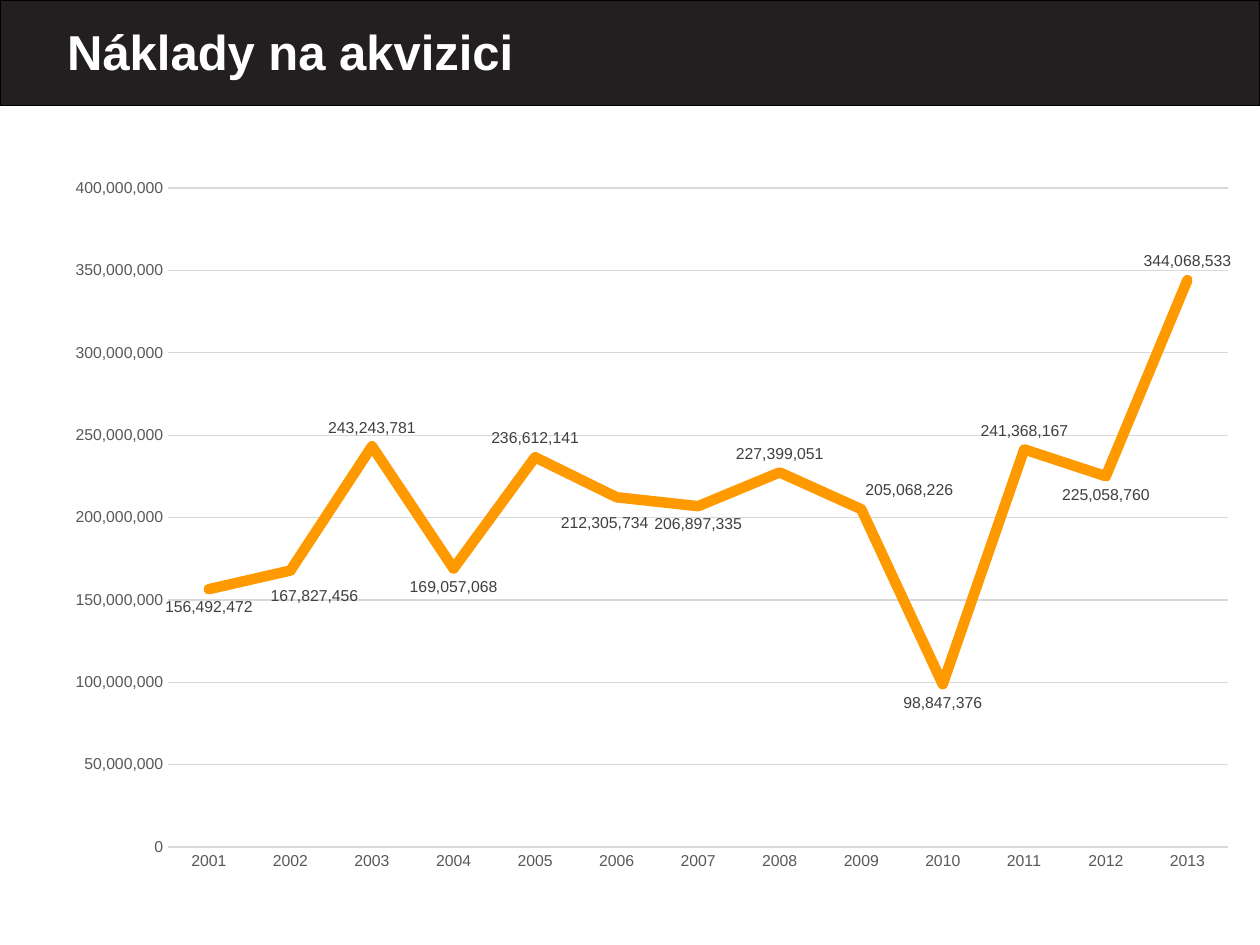
"""Build the acquisition cost slide: a dark title banner above a yearly line chart."""
from lxml import etree
from pptx import Presentation
from pptx.chart.data import CategoryChartData
from pptx.dml.color import RGBColor
from pptx.enum.chart import XL_CHART_TYPE, XL_LABEL_POSITION, XL_MARKER_STYLE, XL_TICK_MARK
from pptx.enum.shapes import MSO_SHAPE
from pptx.enum.text import MSO_ANCHOR, PP_ALIGN
from pptx.oxml.ns import qn
from pptx.util import Cm, Pt

COLORS = {"banner": "231F20", "border": "000000", "title": "FFFFFF", "axis": "595959",
          "grid": "D9D9D9", "label": "404040", "cost": "FF9900"}
COSTS = [156492472, 167827456, 243243781, 169057068, 236612141, 212305734, 206897335,
         227399051, 205068226, 98847376, 241368167, 225058760, 344068533]
FIRST_YEAR = 2001
CHART_BOX = [Cm(1.04), Cm(3.33), Cm(24.21), Cm(14.53)]
PLOT_BOX = [Cm(3.39), Cm(3.79), Cm(21.37), Cm(13.29)]
LABELS_BELOW = [2001, 2002, 2004, 2006, 2007, 2010, 2012]
LABEL_SHIFTS = {2002: (0.02, 0.01), 2006: (-0.01, 0.01), 2009: (0.04, 0)}


def set_font(font, color, size, bold=False):
    for key, value in {"name": "Arial", "size": Pt(size), "bold": bold}.items():
        setattr(font, key, value)
    font.color.rgb = RGBColor.from_string(COLORS[color])


def add_layout(parent, index, values):
    for old in parent.findall(qn("c:layout")):
        parent.remove(old)
    layout = etree.Element(qn("c:layout"))
    manual = etree.SubElement(layout, qn("c:manualLayout"))
    for tag, value in values.items():
        etree.SubElement(manual, qn(f"c:{tag}")).set("val", str(value))
    parent.insert(index, layout)


rgb = {name: RGBColor.from_string(value) for name, value in COLORS.items()}
prs = Presentation()
prs.slide_width, prs.slide_height = Cm(25.4), Cm(19.05)
s = prs.slides.add_slide(prs.slide_layouts[5])

banner = s.shapes.add_shape(MSO_SHAPE.RECTANGLE, 0, 0, prs.slide_width, Cm(2.13))
banner.shadow.inherit = False
banner.fill.solid()
banner.fill.fore_color.rgb = rgb["banner"]
banner.line.color.rgb = rgb["border"]
banner.line.width = Pt(0.75)
s.shapes._spTree.insert(2, banner._element)

title = s.shapes.title
box = {"left": Cm(1.1), "top": Cm(0.13), "width": Cm(22.86), "height": Cm(1.8)}
for key, value in box.items():
    setattr(title, key, value)
tf = title.text_frame
tf.vertical_anchor = MSO_ANCHOR.MIDDLE
p = tf.paragraphs[0]
p.alignment = PP_ALIGN.LEFT
r = p.add_run()
r.text = "Náklady na akvizici"
set_font(r.font, "title", 28, True)

data = CategoryChartData(number_format="#,##0")
data.categories = [str(FIRST_YEAR + i) for i in range(len(COSTS))]
data.add_series("Series 1", COSTS)
chart = s.shapes.add_chart(XL_CHART_TYPE.LINE_MARKERS, *CHART_BOX, data).chart
chart.has_legend = chart.has_title = False
chart.font.name, chart.font.size = "Arial", Pt(10)

left, top, width, height = CHART_BOX
plot_left, plot_top, plot_width, plot_height = PLOT_BOX
add_layout(chart._chartSpace.chart.plotArea, 0, {
    "layoutTarget": "inner", "xMode": "edge", "yMode": "edge",
    "x": (plot_left - left) / width, "y": (plot_top - top) / height,
    "w": plot_width / width, "h": plot_height / height})

cat_axis, val_axis = chart.category_axis, chart.value_axis
for axis in (cat_axis, val_axis):
    axis.major_tick_mark = axis.minor_tick_mark = XL_TICK_MARK.NONE
    set_font(axis.tick_labels.font, "axis", 9)
val_axis.minimum_scale, val_axis.maximum_scale, val_axis.major_unit = 0, 400000000, 50000000
val_axis.tick_labels.number_format = "#,##0"
val_axis.tick_labels.number_format_is_linked = False
val_axis.format.line.fill.background()
for line in (cat_axis.format.line, val_axis.major_gridlines.format.line):
    line.color.rgb = rgb["grid"]
    line.width = Pt(0.75)

plot = chart.plots[0]
plot.vary_by_categories = False
series = plot.series[0]
series.smooth = False
series.format.line.color.rgb = rgb["cost"]
series.format.line.width = Pt(6)
series.format.line._get_or_add_ln().set("cap", "rnd")
marker = series.marker
marker.style, marker.size = XL_MARKER_STYLE.CIRCLE, 5
marker.format.fill.solid()
marker.format.fill.fore_color.rgb = rgb["cost"]
marker.format.line.fill.background()

labels = series.data_labels
options = {"show_value": True, "position": XL_LABEL_POSITION.ABOVE,
           "number_format": "#,##0", "number_format_is_linked": False}
for key, value in options.items():
    setattr(labels, key, value)
set_font(labels.font, "label", 9)
for leader in labels._element.findall(qn("c:showLeaderLines")):
    labels._element.remove(leader)

for year in sorted({*LABELS_BELOW, *LABEL_SHIFTS}):
    label = series.points[year - FIRST_YEAR].data_label
    set_font(label.font, "label", 9)
    below = year in LABELS_BELOW
    label.position = XL_LABEL_POSITION.BELOW if below else XL_LABEL_POSITION.ABOVE
    if year in LABEL_SHIFTS:
        add_layout(label._get_or_add_dLbl(), 1, dict(zip("xy", LABEL_SHIFTS[year])))

prs.save("out.pptx")
